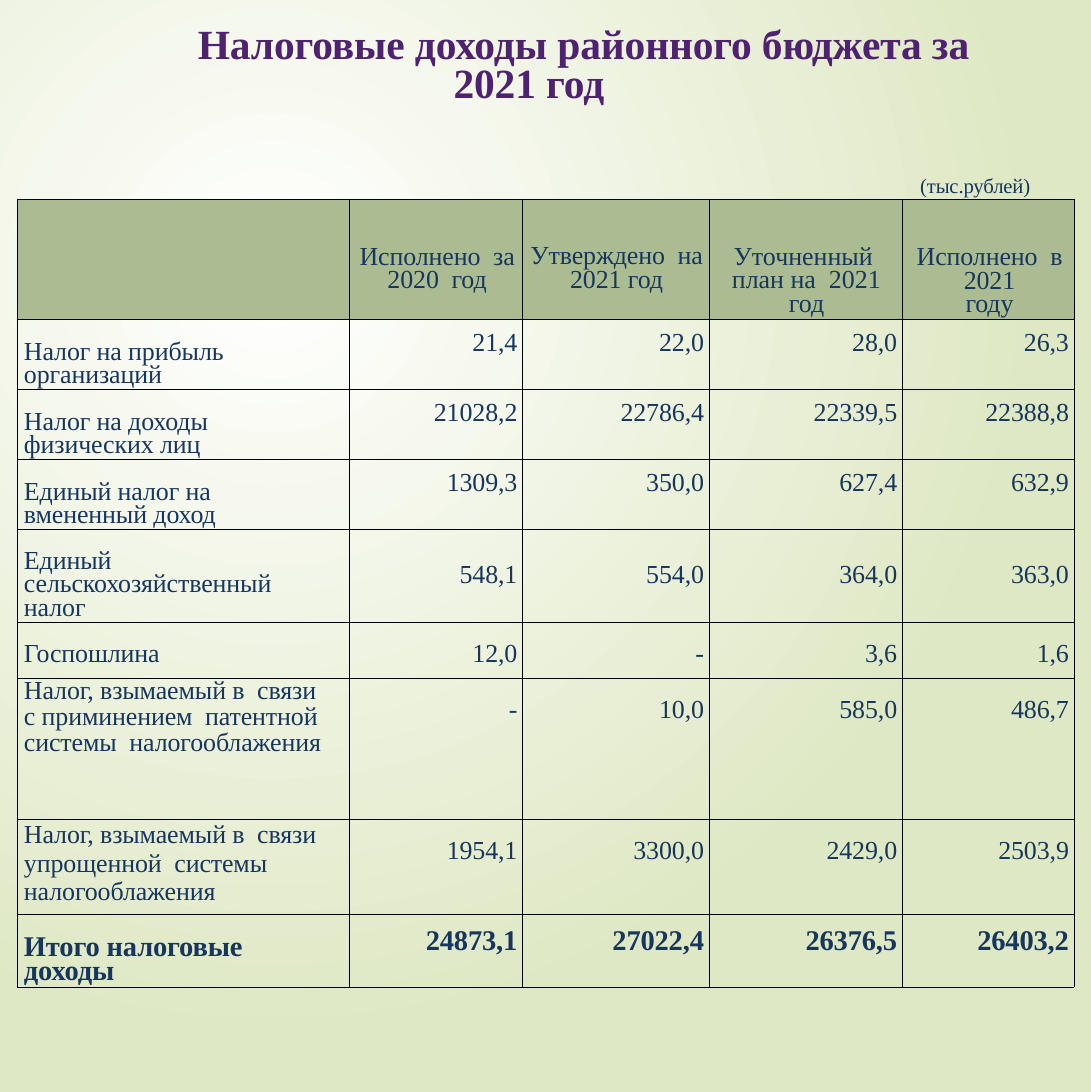
import dataclasses
from typing import Optional, Union

import lxml.etree
import pptx
import pptx.dml.color
import pptx.enum.dml
import pptx.enum.text
import pptx.oxml.ns
import pptx.util

Pt = pptx.util.Pt
RGB = pptx.dml.color.RGBColor.from_string
ALIGN = pptx.enum.text.PP_ALIGN
qn = pptx.oxml.ns.qn

COLORS = {"title": "4F2171", "text": "17365D", "header": "ACBC92",
          "border": "000000", "light": "FFFFFF", "green": "DFE8C4"}
FONT = "Times New Roman"
COLUMNS = [256.3, 133.9, 144, 149, 132.5]


@dataclasses.dataclass
class Style:
    top: float = 0
    left: float = 0
    right: float = 0
    line: Union[float, pptx.util.Length, None] = None
    size: float = 20
    bold: bool = False
    color: str = "text"
    align: int = ALIGN.LEFT
    spacing: float = -0.1


@dataclasses.dataclass
class Tax:
    height: float
    name: str
    values: list[str]
    name_top: float
    name_line: Optional[Union[float, pptx.util.Length]]
    value_top: float
    value_line: Optional[pptx.util.Length] = None
    size: float = 20
    bold: bool = False


HEADER_HEIGHT = 92
HEADERS = [
    ("", Style()),
    ("Исполнено  за 2020  год", Style(36.6, 6, 4, Pt(18.3), align=ALIGN.CENTER)),
    ("Утверждено  на 2021 год", Style(35.9, 5, 4, Pt(18.3), align=ALIGN.CENTER)),
    ("Уточненный  план на  2021 год", Style(36.6, 8, 7, Pt(18.3), align=ALIGN.CENTER, spacing=0)),
    ("Исполнено  в 2021\nгоду", Style(37, 6, 4, Pt(18.2), align=ALIGN.CENTER)),
]

TIGHT = Pt(17.6)
TAXES = [
    Tax(54, "Налог на прибыль  организаций", ["21,4", "22,0", "28,0", "26,3"],
        18.2, Pt(18), 7.2),
    Tax(54, "Налог на доходы  физических лиц",
        ["21028,2", "22786,4", "22339,5", "22388,8"], 18.2, Pt(18), 7.2),
    Tax(54, "Единый налог на  вмененный доход", ["1309,3", "350,0", "627,4", "632,9"],
        18, Pt(18), 7.2),
    Tax(71.5, "Единый\nсельскохозяйственный  налог", ["548,1", "554,0", "364,0", "363,0"],
        16.8, Pt(18.2), 24),
    Tax(43.5, "Госпошлина", ["12,0", "-", "3,6", "1,6"], 17.6, TIGHT, 17.6, TIGHT),
    Tax(108.5, "Налог, взымаемый в  связи с приминением  патентной системы  налогооблажения",
        ["-", "10,0", "585,0", "486,7"], 0, 0.91, 17.6, TIGHT),
    Tax(73.4, "Налог, взымаемый в  связи упрощенной  системы\nналогооблажения",
        ["1954,1", "3300,0", "2429,0", "2503,9"], 0.7, None, 17.6, TIGHT),
    Tax(56.2, "Итого налоговые  доходы", ["24873,1", "27022,4", "26376,5", "26403,2"],
        18.5, Pt(18.5), 8, size=22, bold=True),
]


def write_paragraph(p, text: str, style: Style) -> None:
    p.alignment = style.align
    p.line_spacing = style.line
    r = p.add_run()
    r.text = text
    formats = {"name": FONT, "size": Pt(style.size), "bold": style.bold}
    for name, value in formats.items():
        setattr(r.font, name, value)
    r.font.color.rgb = RGB(COLORS[style.color])
    r.font._element.set("spc", str(round(style.spacing * 100)))


def set_borders(cell) -> None:
    tc_pr = cell._tc.get_or_add_tcPr()
    for i, side in enumerate(("lnL", "lnR", "lnT", "lnB")):
        ln = lxml.etree.Element(qn(f"a:{side}"), w=str(Pt(0.5)))
        fill = lxml.etree.SubElement(ln, qn("a:solidFill"))
        lxml.etree.SubElement(fill, qn("a:srgbClr"), val=COLORS["border"])
        tc_pr.insert(i, ln)


def fill_cell(cell, text: str, style: Style, fill: Optional[str] = None) -> None:
    margins = {"margin_left": style.left, "margin_top": style.top,
               "margin_right": style.right, "margin_bottom": 0}
    for name, value in margins.items():
        setattr(cell, name, Pt(value))
    if fill:
        cell.fill.solid()
        cell.fill.fore_color.rgb = RGB(COLORS[fill])
    else:
        cell.fill.background()
    set_borders(cell)
    if not text:
        return
    tf = cell.text_frame
    for i, line in enumerate(text.split("\n")):
        p = tf.add_paragraph() if i else tf.paragraphs[0]
        write_paragraph(p, line, style)


def draw_background(s) -> None:
    """Radial gradient centred in the upper left quarter."""
    fill = s.background.fill
    fill.gradient()
    for stop, color in zip(fill.gradient_stops, ("light", "green")):
        stop.color.rgb = RGB(COLORS[color])
    grad = s.element.find(".//" + qn("a:gradFill"))
    grad.remove(grad.find(qn("a:lin")))
    circle = lxml.etree.SubElement(grad, qn("a:path"), path="circle")
    lxml.etree.SubElement(circle, qn("a:fillToRect"),
                          l="50000", t="50000", r="100000", b="100000")


def draw_title(s) -> None:
    sp = s.shapes.add_textbox(Pt(151.2), Pt(19.4), Pt(643.7), Pt(134.6))
    tf = sp.text_frame
    formats = {"word_wrap": True, "margin_left": 0, "margin_top": Pt(2.9),
               "margin_right": 0, "margin_bottom": 0}
    for name, value in formats.items():
        setattr(tf, name, value)
    p = tf.paragraphs[0]
    write_paragraph(p, "Налоговые доходы районного бюджета за  2021 год",
                    Style(line=Pt(30), size=32, bold=True, color="title"))
    p.space_before = Pt(2.9)
    p_pr = p._p.get_or_add_pPr()
    p_pr.set("marL", str(Pt(198.7)))
    p_pr.set("indent", str(Pt(-197.3)))
    p = tf.add_paragraph()
    write_paragraph(p, "(тыс.рублей)", Style(size=16, align=ALIGN.RIGHT))
    p.space_before = Pt(50.8)


def draw_table(s) -> None:
    heights = [HEADER_HEIGHT] + [tax.height for tax in TAXES]
    table = s.shapes.add_table(len(heights), len(COLUMNS), Pt(13), Pt(154),
                               Pt(sum(COLUMNS)), Pt(sum(heights))).table
    table.first_row = table.horz_banding = False
    for column, width in zip(table.columns, COLUMNS):
        column.width = Pt(width)
    for row, height in zip(table.rows, heights):
        row.height = Pt(height)
    for c, (text, style) in enumerate(HEADERS):
        fill_cell(table.cell(0, c), text, style, "header")
    for i, tax in enumerate(TAXES, 1):
        fill_cell(table.cell(i, 0), tax.name,
                  Style(tax.name_top, 5.5, 14, tax.name_line, tax.size, tax.bold))
        value_style = Style(tax.value_top, 0, 4, tax.value_line, tax.size, tax.bold,
                            align=ALIGN.RIGHT)
        for c, value in enumerate(tax.values, 1):
            fill_cell(table.cell(i, c), value, value_style)


def main() -> None:
    prs = pptx.Presentation()
    prs.slide_width, prs.slide_height = Pt(841.7), Pt(842.4)
    s = prs.slides.add_slide(prs.slide_layouts[6])
    draw_background(s)
    draw_title(s)
    draw_table(s)
    prs.save("out.pptx")


if __name__ == "__main__":
    main()
